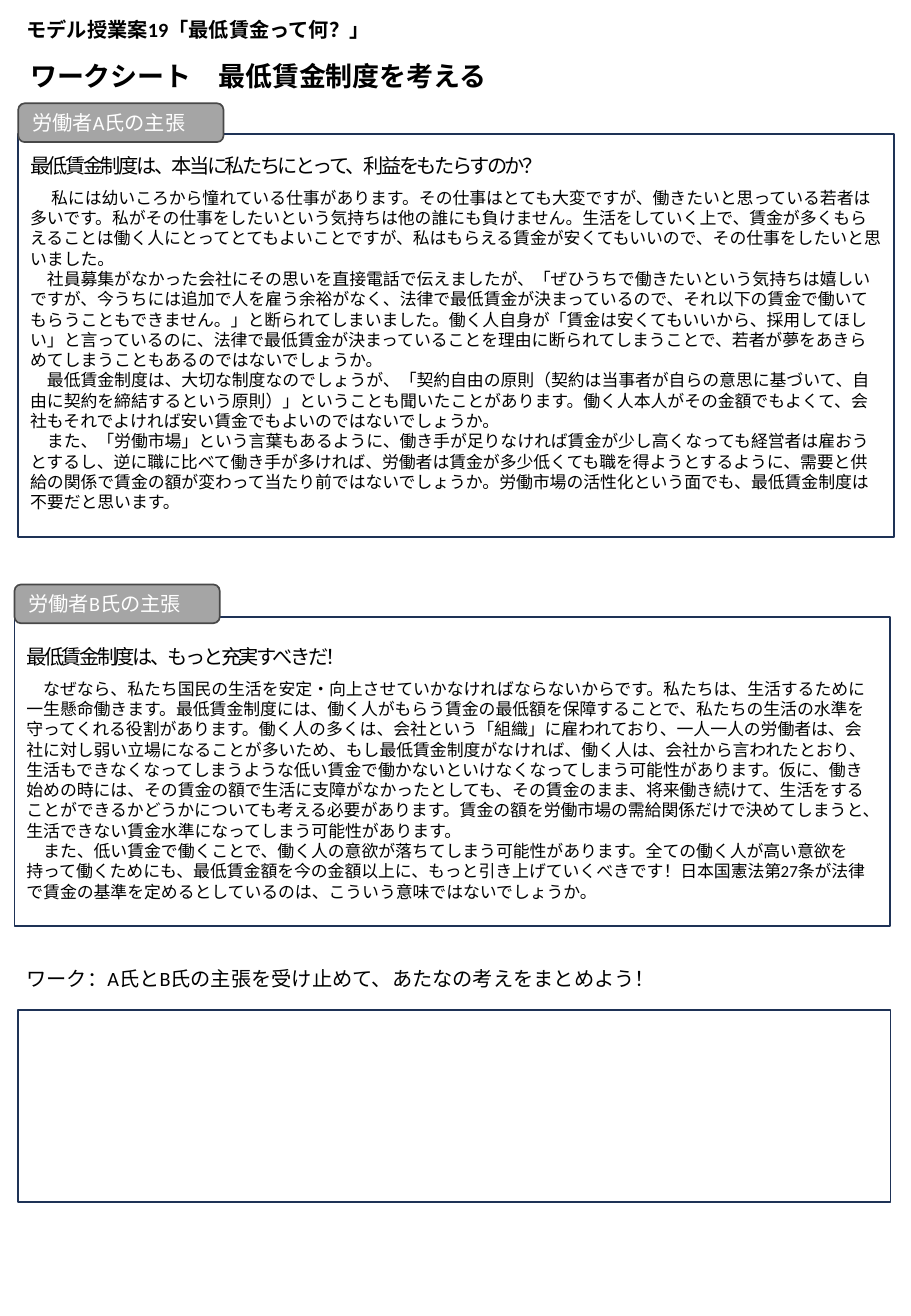
from dataclasses import dataclass

from pptx import Presentation
from pptx.dml.color import RGBColor
from pptx.enum.shapes import MSO_SHAPE as SHAPE
from pptx.enum.text import MSO_ANCHOR as ANCHOR, MSO_AUTO_SIZE as AUTO_SIZE, PP_ALIGN as ALIGN
from pptx.util import Pt

FONT = "Calibri"
BLACK, WHITE, NAVY, GRAY, DARK_GRAY = "000000", "FFFFFF", "1E3256", "A5A5A5", "484848"
LABEL_SIZE = (121.7, 23)


@dataclass
class Area:
    left: float
    top: float
    width: float
    height: float

    def lengths(self) -> list:
        return [Pt(v) for v in (self.left, self.top, self.width, self.height)]


@dataclass
class Line:
    text: str
    size: float = 10
    bold: bool = False
    spacing: float = 0
    after: float = 0
    indent: float = 0
    color: str = BLACK


@dataclass
class Claim:
    label: str
    label_top: float
    frame: Area
    text_area: Area
    heading: str
    body: list[Line]


CLAIMS = [
    Claim("労働者A氏の主張", 61.2, Area(10.8, 79.2, 519.1, 239), Area(10.8, 87.1, 519.1, 239),
          "最低賃金制度は、本当に私たちにとって、利益をもたらすのか？", [
        Line("　私には幼いころから憧れている仕事があります。その仕事はとても大変ですが、働きたいと思っている若者は"
             "多いです。私がその仕事をしたいという気持ちは他の誰にも負けません。生活をしていく上で、賃金が多くもら"
             "えることは働く人にとってとてもよいことですが、私はもらえる賃金が安くてもいいので、その仕事をしたいと思"
             "いました。", indent=2.5),
        Line("　社員募集がなかった会社にその思いを直接電話で伝えましたが、「ぜひうちで働きたいという気持ちは嬉しい"
             "ですが、今うちには追加で人を雇う余裕がなく、法律で最低賃金が決まっているので、それ以下の賃金で働いて"
             "もらうこともできません。」と断られてしまいました。働く人自身が「賃金は安くてもいいから、採用してほし"),
        Line("い」と言っているのに、法律で最低賃金が決まっていることを理由に断られてしまうことで、若者が夢をあきら"),
        Line("めてしまうこともあるのではないでしょうか。"),
        Line("　最低賃金制度は、大切な制度なのでしょうが、「契約自由の原則（契約は当事者が自らの意思に基づいて、自"
             "由に契約を締結するという原則）」ということも聞いたことがあります。働く人本人がその金額でもよくて、会"
             "社もそれでよければ安い賃金でもよいのではないでしょうか。"),
        Line("　また、「労働市場」という言葉もあるように、働き手が足りなければ賃金が少し高くなっても経営者は雇おう"
             "とするし、逆に職に比べて働き手が多ければ、労働者は賃金が多少低くても職を得ようとするように、需要と供"
             "給の関係で賃金の額が変わって当たり前ではないでしょうか。労働市場の活性化という面でも、最低賃金制度は"
             "不要だと思います。"),
    ]),
    Claim("労働者B氏の主張", 346.3, Area(8.6, 365.8, 519.1, 182.9), Area(8.6, 378, 517, 182.9),
          "最低賃金制度は、もっと充実すべきだ！", [
        Line("　なぜなら、私たち国民の生活を安定・向上させていかなければならないからです。私たちは、生活するために一"
             "生懸命働きます。最低賃金制度には、働く人がもらう賃金の最低額を保障することで、私たちの生活の水準を"
             "守ってくれる役割があります。働く人の多くは、会社という「組織」に雇われており、一人一人の労働者は、会"
             "社に対し弱い立場になることが多いため、もし最低賃金制度がなければ、働く人は、会社から言われたとおり、"
             "生活もできなくなってしまうような低い賃金で働かないといけなくなってしまう可能性があります。仮に、働き"
             "始めの時には、その賃金の額で生活に支障がなかったとしても、その賃金のまま、将来働き続けて、生活をする"
             "ことができるかどうかについても考える必要があります。賃金の額を労働市場の需給関係だけで決めてしまうと、"
             "生活できない賃金水準になってしまう可能性があります。"),
        Line("　また、低い賃金で働くことで、働く人の意欲が落ちてしまう可能性があります。全ての働く人が高い意欲を"
             "持って働くためにも、最低賃金額を今の金額以上に、もっと引き上げていくべきです！日本国憲法第27条が法律"
             "で賃金の基準を定めるとしているのは、こういう意味ではないでしょうか。"),
    ]),
]


def rgb(color: str) -> RGBColor:
    return RGBColor.from_string(color)


def write(tf, lines: list[Line]) -> None:
    for i, line in enumerate(lines):
        p = tf.add_paragraph() if i else tf.paragraphs[0]
        p.text = line.text
        p.alignment = ALIGN.LEFT
        p.space_after = Pt(line.after)
        p.font.name, p.font.size, p.font.bold = FONT, Pt(line.size), line.bold
        p.font.color.rgb = rgb(line.color)
        pPr = p._p.get_or_add_pPr()
        if line.indent:
            pPr.set("indent", str(Pt(line.indent)))
        if line.spacing:
            pPr.get_or_add_defRPr().set("spc", str(round(line.spacing * 100)))


def add_text(slide, area: Area, lines: list[Line], wrap: bool = True) -> None:
    tf = slide.shapes.add_textbox(*area.lengths()).text_frame
    tf.word_wrap = wrap
    tf.auto_size = AUTO_SIZE.SHAPE_TO_FIT_TEXT
    write(tf, lines)


def add_box(slide, kind: SHAPE, area: Area, line_color: str, fill: str | None = None):
    sp = slide.shapes.add_shape(kind, *area.lengths())
    sp.shadow.inherit = False
    sp.line.color.rgb = rgb(line_color)
    sp.line.width = Pt(1)
    if fill:
        sp.fill.solid()
        sp.fill.fore_color.rgb = rgb(fill)
    else:
        sp.fill.background()
    return sp


def add_claim(slide, claim: Claim) -> None:
    add_box(slide, SHAPE.RECTANGLE, claim.frame, NAVY)
    heading = Line(claim.heading, size=12, spacing=-1.5, after=6)
    add_text(slide, claim.text_area, [heading, *claim.body])
    label_area = Area(claim.frame.left, claim.label_top, *LABEL_SIZE)
    label = add_box(slide, SHAPE.ROUNDED_RECTANGLE, label_area, DARK_GRAY, GRAY)
    label.text_frame.vertical_anchor = ANCHOR.MIDDLE
    write(label.text_frame, [Line(claim.label, size=12, color=WHITE)])


def main() -> None:
    prs = Presentation()
    prs.slide_width, prs.slide_height = Pt(540), Pt(779.76)
    slide = prs.slides.add_slide(prs.slide_layouts[6])

    add_text(slide, Area(8.6, 6.5, 334.8, 21.6),
             [Line("モデル授業案19「最低賃金って何？」", size=12, bold=True)])
    add_text(slide, Area(10.8, 31.7, 289.4, 26.6),
             [Line("ワークシート　最低賃金制度を考える", size=16, bold=True)], wrap=False)
    for claim in CLAIMS:
        add_claim(slide, claim)
    add_text(slide, Area(8.6, 568.8, 413.3, 21.6),
             [Line("ワーク：A氏とB氏の主張を受け止めて、あたなの考えをまとめよう！", size=12)])
    add_box(slide, SHAPE.RECTANGLE, Area(10.8, 598.3, 517, 113.8), NAVY)

    prs.save("out.pptx")


if __name__ == "__main__":
    main()
